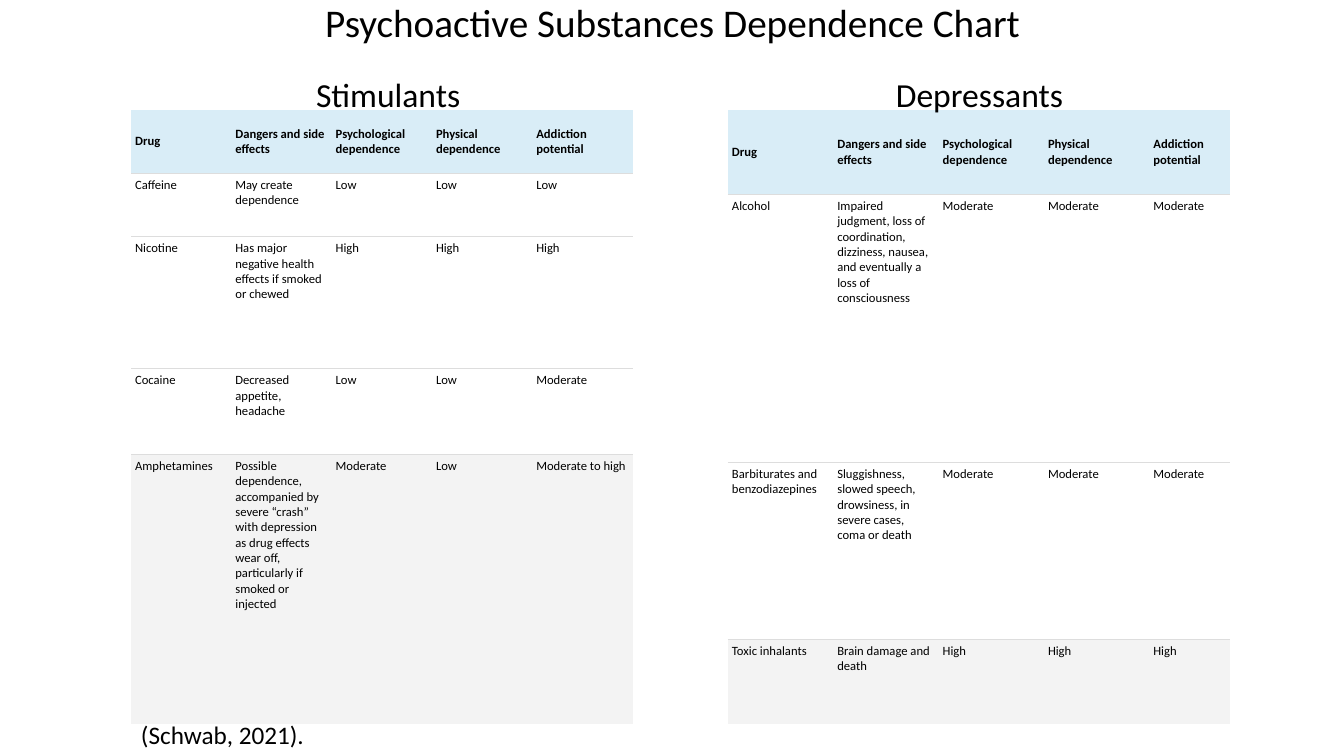
from lxml import etree
from pptx import Presentation
from pptx import util as u
from pptx.dml import color
from pptx.enum import text
from pptx.oxml import ns


def rgb(value):
    return color.RGBColor.from_string(value)


class DependenceSlide:
    """Draws headings and dependence tables on one slide in a shared style."""

    FONT = "Calibri"
    INK = "000000"
    RULE = "DDDDDD"
    HEADER, BODY, LAST = "D9EDF7", "FFFFFF", "F3F3F3"
    INSET = 0.04

    def __init__(self, slide):
        self.slide = slide

    def add_words(self, frame, words, size, bold=False, align=text.PP_ALIGN.LEFT):
        paragraph = frame.paragraphs[0]
        paragraph.alignment = align
        run = paragraph.add_run()
        run.text = words
        run.font.name = self.FONT
        run.font.size = u.Pt(size)
        run.font.bold = bold
        run.font.color.rgb = rgb(self.INK)

    def label(self, words, left, top, width, height, size, align=text.PP_ALIGN.CENTER):
        box = self.slide.shapes.add_textbox(*map(u.Inches, (left, top, width, height)))
        box.text_frame.word_wrap = True
        box.text_frame.auto_size = text.MSO_AUTO_SIZE.SHAPE_TO_FIT_TEXT
        self.add_words(box.text_frame, words, size, align=align)

    def border(self, cell, side, ruled):
        line = etree.SubElement(cell._tc.get_or_add_tcPr(), ns.qn(f"a:ln{side}"))
        if ruled:
            line.set("w", str(u.Pt(0.75)))
            paint = etree.SubElement(line, ns.qn("a:solidFill"))
            etree.SubElement(paint, ns.qn("a:srgbClr"), val=self.RULE)
        else:
            etree.SubElement(line, ns.qn("a:noFill"))

    def cell(self, cell, words, is_header, is_last):
        for side in "LRTB":
            ruled = (side == "T" and not is_header) or (side == "B" and not is_last)
            self.border(cell, side, ruled)
        cell.fill.solid()
        cell.fill.fore_color.rgb = rgb(
            self.HEADER if is_header else self.LAST if is_last else self.BODY)
        cell.margin_left = cell.margin_right = u.Inches(self.INSET)
        cell.margin_top = cell.margin_bottom = u.Inches(self.INSET)
        cell.vertical_anchor = (
            text.MSO_ANCHOR.MIDDLE if is_header else text.MSO_ANCHOR.TOP)
        self.add_words(cell.text_frame, words, 9, bold=is_header)

    def table(self, rows, heights, left, last_width, top=1.09, width=4.98):
        columns = len(rows[0])
        table = self.slide.shapes.add_table(
            len(rows), columns, u.Inches(left), u.Inches(top),
            u.Inches(width), u.Inches(sum(heights))).table
        table.first_row = table.horz_banding = False
        for column in table.columns:
            column.width = u.Inches((width - last_width) / (columns - 1))
        table.columns[columns - 1].width = u.Inches(last_width)
        for r, (row, height) in enumerate(zip(rows, heights)):
            table.rows[r].height = u.Inches(height)
            for c, words in enumerate(row):
                self.cell(table.cell(r, c), words, r == 0, r == len(rows) - 1)


HEADINGS = ("Drug", "Dangers and side effects", "Psychological dependence",
            "Physical dependence", "Addiction potential")
STIMULANTS = [
    HEADINGS,
    ("Caffeine", "May create dependence", "Low", "Low", "Low"),
    ("Nicotine", "Has major negative health effects if smoked or chewed",
     "High", "High", "High"),
    ("Cocaine", "Decreased appetite, headache", "Low", "Low", "Moderate"),
    ("Amphetamines",
     "Possible dependence, accompanied by severe “crash” with depression "
     "as drug effects wear off, particularly if smoked or injected",
     "Moderate", "Low", "Moderate to high"),
]
DEPRESSANTS = [
    HEADINGS,
    ("Alcohol",
     "Impaired judgment, loss of coordination, dizziness, nausea, "
     "and eventually a loss of consciousness",
     "Moderate", "Moderate", "Moderate"),
    ("Barbiturates and benzodiazepines",
     "Sluggishness, slowed speech, drowsiness, in severe cases, coma or death",
     "Moderate", "Moderate", "Moderate"),
    ("Toxic inhalants", "Brain damage and death", "High", "High", "High"),
]


def main():
    deck = Presentation()
    deck.slide_width, deck.slide_height = u.Inches(13.33), u.Inches(7.5)
    page = DependenceSlide(deck.slides.add_slide(deck.slide_layouts[6]))
    page.table(STIMULANTS, (0.63, 0.63, 1.31, 0.85, 2.67), left=1.3, last_width=1)
    page.table(DEPRESSANTS, (0.84, 2.66, 1.75, 0.84), left=7.22, last_width=0.8)
    page.label("Stimulants", 1.3, 0.68, 5.1, 0.5, 24)
    page.label("Depressants", 7.73, 0.68, 3.97, 0.5, 24)
    page.label("Psychoactive Substances Dependence Chart", 2.21, -0.07, 8.92, 0.57, 28)
    page.label("(Schwab, 2021).", 1.3, 7.09, 6.67, 0.4, 18, text.PP_ALIGN.LEFT)
    deck.save("out.pptx")


if __name__ == "__main__":
    main()
